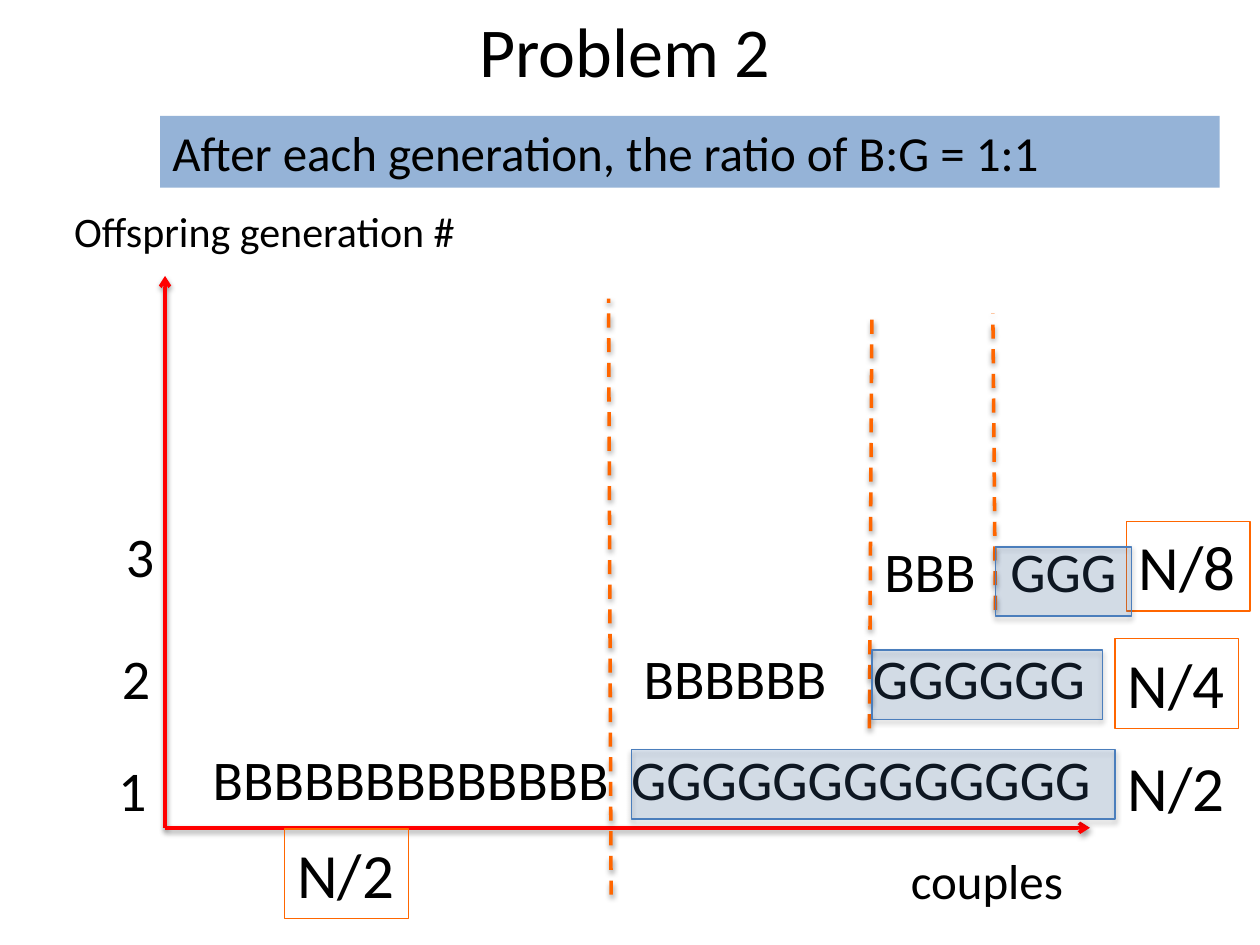
from dataclasses import dataclass

from lxml import etree
from pptx import Presentation
from pptx.dml.color import RGBColor
from pptx.enum.dml import MSO_LINE
from pptx.enum.shapes import MSO_CONNECTOR, MSO_SHAPE
from pptx.enum.text import MSO_ANCHOR, MSO_AUTO_SIZE, PP_ALIGN
from pptx.oxml.ns import qn
from pptx.util import Inches, Pt

STRAIGHT = MSO_CONNECTOR.STRAIGHT
RECTANGLE = MSO_SHAPE.RECTANGLE
DASH = MSO_LINE.DASH
LEFT, CENTER = PP_ALIGN.LEFT, PP_ALIGN.CENTER
TOP, MIDDLE = MSO_ANCHOR.TOP, MSO_ANCHOR.MIDDLE
GROW = MSO_AUTO_SIZE.SHAPE_TO_FIT_TEXT


@dataclass(frozen=True)
class Theme:
    font: str = "Calibri"
    text: str = "000000"
    axis: str = "FF0000"
    divider: str = "FF6600"
    banner: str = "95B3D7"
    girls_fill: str = "4F81BD"
    girls_line: str = "4B7EBC"
    girls_opacity: int = 18
    title_size: int = 40
    share_size: int = 36
    row_size: int = 32
    banner_size: int = 28
    axis_size: int = 24
    line_width: float = 2
    outline_width: float = 0.75


THEME = Theme()


def color(value):
    return RGBColor.from_string(value)


def place(shape, box):
    for name, value in zip(("left", "top", "width", "height"), box):
        setattr(shape, name, Inches(value))


def write(shape, text, size, align=LEFT, **frame_format):
    frame = shape.text_frame
    for name, value in {"vertical_anchor": TOP, **frame_format}.items():
        setattr(frame, name, value)
    paragraph = frame.paragraphs[0]
    paragraph.alignment = align
    run = paragraph.add_run()
    run.text = text
    for name, value in {"name": THEME.font, "size": Pt(size)}.items():
        setattr(run.font, name, value)
    run.font.color.rgb = color(THEME.text)
    return paragraph


def add_label(slide, box, text, size, wrap=False):
    label = slide.shapes.add_textbox(*map(Inches, box))
    return write(label, text, size, word_wrap=wrap, auto_size=GROW)


def add_rectangle(slide, box, fill=None, line=None):
    rectangle = slide.shapes.add_shape(RECTANGLE, *map(Inches, box))
    rectangle.shadow.inherit = False
    if fill:
        rectangle.fill.solid()
        rectangle.fill.fore_color.rgb = color(fill)
    else:
        rectangle.fill.background()
    if line:
        rectangle.line.color.rgb = color(line)
        rectangle.line.width = Pt(THEME.outline_width)
    else:
        rectangle.line.fill.background()
    return rectangle


def add_shadow(shape, opacity, distance):
    properties = shape._element.spPr
    effects = properties.find(qn("a:effectLst"))
    if effects is None:
        effects = etree.SubElement(properties, qn("a:effectLst"))
    shadow = etree.SubElement(effects, qn("a:outerShdw"), blurRad=str(Pt(3.1)),
                              dist=str(Pt(distance)), dir="5400000", rotWithShape="0")
    black = etree.SubElement(shadow, qn("a:srgbClr"), val="000000")
    etree.SubElement(black, qn("a:alpha"), val=str(opacity * 1000))


def add_line(slide, start, end, line_color, dash=None, arrow=False):
    connector = slide.shapes.add_connector(STRAIGHT, *map(Inches, (*start, *end)))
    connector.line.color.rgb = color(line_color)
    connector.line.width = Pt(THEME.line_width)
    if dash:
        connector.line.dash_style = dash
    if arrow:
        etree.SubElement(connector.line._get_or_add_ln(), qn("a:tailEnd"), type="arrow")
    add_shadow(connector, 38, 1.6)


def add_share(slide, left, top, text, boxed=True):
    """Label a group with its share of the N couples."""
    box = (left, top, 0.98, 0.71)
    if boxed:
        share = add_rectangle(slide, box, line=THEME.divider)
        write(share, text, THEME.share_size, word_wrap=False, auto_size=GROW)
    else:
        add_label(slide, box, text, THEME.share_size)


def add_title(slide, box):
    title = slide.shapes.title
    place(title, box)
    write(title, "Problem 2", THEME.title_size, CENTER, vertical_anchor=MIDDLE)


def add_banner(slide, box):
    banner = add_rectangle(slide, box, fill=THEME.banner)
    write(banner, "After each generation, the ratio of B:G = 1:1",
          THEME.banner_size, word_wrap=True, auto_size=GROW)


def add_axes(slide, box):
    left, top, width, height = box
    origin = (left, top + height)
    for end in ((left, top), (left + width, top + height)):
        add_line(slide, origin, end, THEME.axis, arrow=True)
    add_label(slide, (left - 0.82, top - 0.61, 3.26, 0.5),
              "Offspring generation #", THEME.axis_size)
    add_label(slide, (left + 5.82, top + height + 0.13, 1.42, 0.57),
              "couples", THEME.banner_size)
    add_share(slide, left + 0.95, top + height + 0.01, "N/2")


def add_generation(slide, box, count, girls_left, wrap):
    """Write the boys, then the girls from a tab stop at girls_left."""
    paragraph = add_label(slide, box, "B" * count + "\t" + "G" * count,
                          THEME.row_size, wrap)
    stops = etree.SubElement(paragraph._p.get_or_add_pPr(), qn("a:tabLst"))
    etree.SubElement(stops, qn("a:tab"), algn="l",
                     pos=str(Inches(girls_left - box[0] - 0.1)))


def add_girls_highlight(slide, box):
    highlight = add_rectangle(slide, box, THEME.girls_fill, THEME.girls_line)
    fill_color = highlight._element.spPr.find(qn("a:solidFill"))[0]
    etree.SubElement(fill_color, qn("a:alpha"), val=str(THEME.girls_opacity * 1000))
    add_shadow(highlight, 35, 1.8)


def add_offspring_chart(slide, box):
    left, top = box[:2]
    add_axes(slide, box)

    def shift(x, y, *size):
        return (left + x, top + y, *size)

    dividers = [((3.54, 4.91), (3.52, 0.18)),
                ((5.59, 3.59), (5.61, 0.3)),
                ((6.59, 2.65), (6.57, 0.3))]
    for start, end in dividers:
        add_line(slide, shift(*start), shift(*end), THEME.divider, DASH)

    # number position, row box, letters per sex, start of girls, wrap
    generations = [((-0.47, 3.76), (0.28, 3.67, 7.26, 0.64), 13, 3.7, False),
                   ((-0.44, 2.87), (3.7, 2.87, 3.84, 0.64), 6, 5.62, True),
                   ((-0.41, 1.9), (5.61, 2.02, 2.09, 0.64), 3, 6.71, False)]
    for number, (position, row, count, girls, wrap) in enumerate(generations, 1):
        add_label(slide, shift(*position, 0.43, 0.64), str(number), THEME.row_size)
        add_generation(slide, shift(*row), count, left + girls, wrap)

    shares = [(7.54, 3.7, "N/2", False), (7.54, 2.88, "N/4", True),
              (7.63, 1.95, "N/8", True)]
    for x, y, text, boxed in shares:
        add_share(slide, *shift(x, y), text, boxed)

    for x, y, width in [(3.7, 3.76, 3.84), (5.61, 2.97, 1.83), (6.59, 2.15, 1.08)]:
        add_girls_highlight(slide, shift(x, y, width, 0.55))


def main():
    presentation = Presentation()
    presentation.slide_width, presentation.slide_height = Inches(10), Inches(7.5)
    slide = presentation.slides.add_slide(presentation.slide_layouts[5])
    add_title(slide, (0.46, -0.23, 9, 1.25))
    add_banner(slide, (1.27, 0.92, 8.41, 0.57))
    add_offspring_chart(slide, (1.31, 2.19, 7.34, 4.38))
    presentation.save("out.pptx")


if __name__ == "__main__":
    main()
